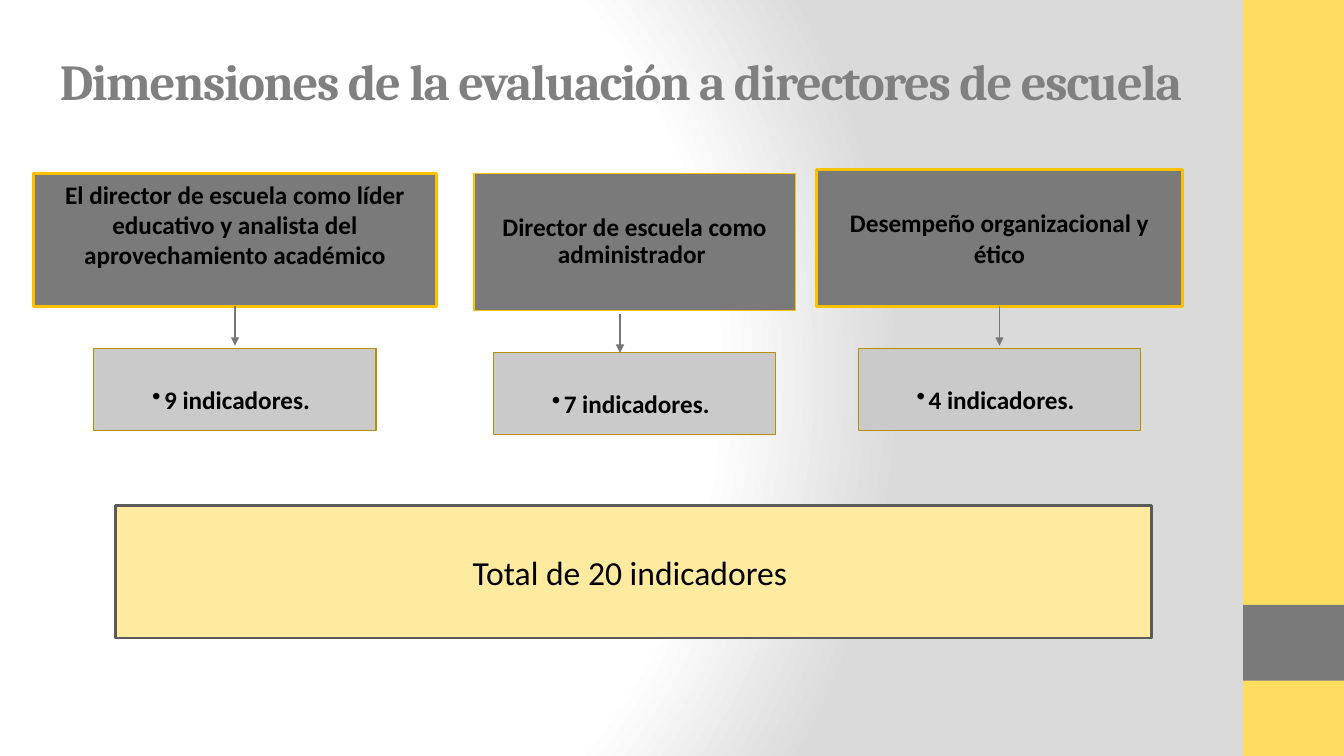
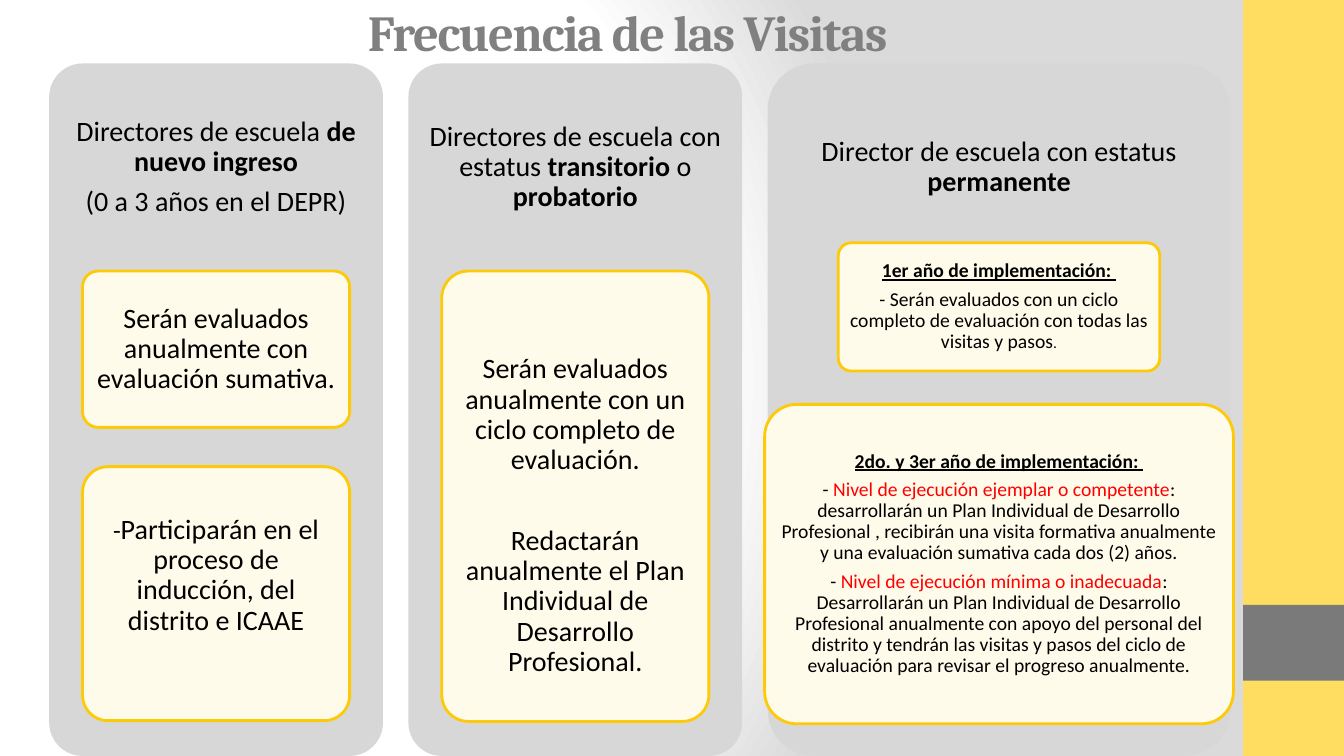
from dataclasses import dataclass

from pptx import Presentation
from pptx.dml.color import RGBColor as Rgb
from pptx.enum.shapes import MSO_CONNECTOR as Link, MSO_SHAPE as Kind
from pptx.enum.text import MSO_ANCHOR as Anchor, PP_ALIGN as Align
from pptx.oxml import parse_xml
from pptx.oxml.ns import nsdecls, qn
from pptx.util import Cm, Pt


@dataclass(frozen=True)
class Theme:
    white: str = "FFFFFF"
    mist: str = "DADADA"
    gold: str = "FEDD61"
    slate: str = "7A7A7A"
    title: str = "808080"
    ink: str = "000000"
    red: str = "FF0000"
    amber: str = "FFC000"
    arrow: str = "777777"
    count: str = "CACACA"
    ochre: str = "B89101"
    total: str = "FEEBA0"
    edge: str = "5A5A5A"
    panel: str = "D7D7D7"
    card: str = "FFFBEB"
    rim: str = "FDCA0A"
    serif: str = "Cambria"
    sans: str = "Calibri"
    huge: int = 36
    big: int = 24
    body: int = 20
    label: int = 18
    note: int = 14
    tiny: int = 11


T = Theme()
RED = {"color": T.red}
BOLD = {"bold": True}
HEAD = {"bold": True, "line": True}


def style(run, size=T.body, font=T.sans, color=T.ink, bold=False, line=False, track=0):
    face = run.font
    face.name, face.size, face.bold = font, Pt(size), bold
    face.underline = line
    face.color.rgb = Rgb.from_string(color)
    if track:
        run._r.get_or_add_rPr().set("spc", str(track * 100))


def dot(para):
    """Give the paragraph a hanging round bullet."""
    props = para._p.get_or_add_pPr()
    props.set("marL", str(Cm(0.3)))
    props.set("indent", str(-Cm(0.3)))
    props.append(parse_xml(f'<a:buChar {nsdecls("a")} char="•"/>'))


def write(shape, paras, align=Align.CENTER, anchor=Anchor.MIDDLE, pad=(0.25, 0.13, 0.25, 0.13),
          space=None, after=0, bullet=False, **fmt):
    """Fill a shape with paragraphs, each a list of strings or (string, format) pairs."""
    frame = shape.text_frame
    frame.word_wrap = True
    frame.vertical_anchor = anchor
    (frame.margin_left, frame.margin_top,
     frame.margin_right, frame.margin_bottom) = map(Cm, pad)
    for i, parts in enumerate(paras):
        para = frame.add_paragraph() if i else frame.paragraphs[0]
        para.alignment = align
        para.space_after = Pt(after)
        if space:
            para.line_spacing = space
        if bullet:
            dot(para)
        for part in parts:
            text, extra = (part, {}) if isinstance(part, str) else part
            run = para.add_run()
            run.text = text
            style(run, **{**fmt, **extra})


def block(slide, box, fill, line=None, width=1, kind=Kind.RECTANGLE):
    shape = slide.shapes.add_shape(kind, *map(Cm, box))
    shape.shadow.inherit = False
    shape.fill.solid()
    shape.fill.fore_color.rgb = Rgb.from_string(fill)
    if line:
        shape.line.color.rgb = Rgb.from_string(line)
        shape.line.width = Pt(width)
    else:
        shape.line.fill.background()
    return shape


def curve(slide, box, fill, **edge):
    shape = block(slide, box, fill, kind=Kind.ROUNDED_RECTANGLE, **edge)
    shape.adjustments[0] = 0.1
    return shape


def label(slide, box, paras, **fmt):
    write(slide.shapes.add_textbox(*map(Cm, box)), paras, **fmt)


def arrow(slide, x, top, start=None):
    """Draw a short arrow downwards, joined to the bottom of start if given."""
    link = slide.shapes.add_connector(Link.STRAIGHT, Cm(x), Cm(top), Cm(x), Cm(top + 0.99))
    if start is not None:
        link.begin_connect(start, 2)
    link.line.color.rgb = Rgb.from_string(T.arrow)
    link.line.width = Pt(1)
    link.line._get_or_add_ln().append(parse_xml(f'<a:tailEnd {nsdecls("a")} type="triangle"/>'))
    link._element.spPr.append(parse_xml(f'<a:effectLst {nsdecls("a")}/>'))


def glow(master):
    """Give the master a round gradient from white to grey."""
    master.background.fill.gradient()
    old = master.element.find(".//" + qn("a:gradFill"))
    stops = "".join(
        f'<a:gs pos="{pos}000"><a:srgbClr val="{color}"/></a:gs>'
        for pos, color in ((0, T.white), (75, T.white), (100, T.mist)))
    old.getparent().replace(old, parse_xml(
        f'<a:gradFill {nsdecls("a")} rotWithShape="1"><a:gsLst>{stops}</a:gsLst>'
        '<a:path path="circle"><a:fillToRect l="20000" t="50000" r="100000" b="50000"/>'
        '</a:path></a:gradFill>'))


def page(prs, title, box, align):
    """Add a slide with the side bands and a title."""
    slide = prs.slides.add_slide(prs.slide_layouts[6])
    block(slide, (31.32, 0, 2.54, 19.05), T.gold)
    block(slide, (31.32, 15.24, 2.54, 1.91), T.slate)
    label(slide, box, [[title]], align=align, size=T.huge, font=T.serif,
          color=T.title, bold=True, track=-1)
    return slide


def areas(prs):
    slide = page(prs, "Dimensiones de la evaluación a directores de escuela ",
                 (0.25, 0.56, 31.04, 2.92), Align.CENTER)
    wide, high = 7.11, 2.06
    rows = (
        ("El director de escuela como líder educativo y analista del aprovechamiento académico",
         (0.84, 4.37, 10.16, 3.35), 2, None, 0.9, 9),
        ("Director de escuela como administrador ", (11.94, 4.37, 8.1, 3.45), 1, 0.9, 0.13, 7),
        ("Desempeño organizacional y ético", (20.57, 4.27, 9.22, 3.45), 2, None, 0.13, 4),
    )
    for text, box, width, space, foot, count in rows:
        left, top, span, tall = box
        mid, base = left + span / 2, top + tall
        head = block(slide, box, T.slate, T.amber, width)
        write(head, [[text]], pad=(0.25, 0.13, 0.25, foot), space=space,
              after=6 if space else 0, size=T.label, bold=True)
        cell = block(slide, (mid - wide / 2, base + 1.07, wide, high), T.count, T.ochre, 0.75)
        write(cell, [[f"{count} indicadores. "]], anchor=Anchor.TOP, pad=(0.18, 0.97, 0.23, 0.25),
              space=0.9, bullet=True, size=T.label, bold=True)
        if width == 2:
            arrow(slide, mid, base, head)
        else:
            arrow(slide, mid - 0.37, base + 0.08)
    total = block(slide, (2.92, 12.73, 26.09, 3.35), T.total, T.edge, 2)
    write(total, [["Total de 20 indicadores "]], size=T.big)


def visits(prs):
    slide = page(prs, "Frecuencia de las Visitas", (9.02, 0, 23.88, 1.6), Align.LEFT)
    wide, gap, top = 6.73, 0.64, 1.6
    small = {"size": T.note, "after": 5, "pad": (0.1, 0.08, 0.1, 0.08)}
    # Each column: panel width, caption, cards as (top, width, height, paragraphs, format).
    cols = (
        (8.41,
         [["Directores de escuela ", ("de nuevo ingreso", BOLD)], ["(0 a 3 años en el DEPR)"]],
         ((6.83, wide, 3.94, [["Serán evaluados anualmente con evaluación sumativa."]], {}),
          (11.76, wide, 6.4,
           [[("-", {"size": T.label}),
             "Participarán en el proceso de inducción, del distrito e ICAAE"]],
           {"pad": (0.13, 0.1, 0.13, 1)}))),
        (8.41,
         [["Directores de escuela con estatus ", ("transitorio ", BOLD), "o",
           (" probatorio", BOLD)]],
         ((6.83, wide, 11.35,
           [["Serán evaluados anualmente con un ciclo completo de evaluación."],
            ["Redactarán anualmente el Plan Individual de Desarrollo Profesional."]],
           {"after": 36, "pad": (0.15, 1.1, 0.15, 0.1)}),)),
        (11.66,
         [["Director de escuela con estatus ", ("permanente", BOLD)]],
         ((6.12, 8.1, 3.23,
           [[("1er año de implementación: ", HEAD)],
            ["- Serán evaluados con un ciclo completo de evaluación con todas las visitas y pasos",
             (".", {"size": T.tiny})]], small),
          (10.19, 11.81, 8.05,
           [[("2do. y 3er año de implementación: ", HEAD)],
            ["- ", ("Nivel de ejecución ejemplar o competente", RED),
             ": desarrollarán un Plan Individual de Desarrollo Profesional , recibirán una visita "
             "formativa anualmente y una evaluación sumativa cada dos (2) años."],
            ["- ", ("Nivel de ejecución mínima o inadecuada", RED),
             ": Desarrollarán un Plan Individual de Desarrollo Profesional anualmente con apoyo "
             "del personal del distrito y tendrán las visitas y pasos del ciclo de evaluación "
             "para revisar el progreso anualmente."]], small))),
    )
    left = 1.24
    for span, head, cards in cols:
        curve(slide, (left, top, span, 17.45), T.panel)
        label(slide, (left, top, span, 5.24), head, pad=(0.2,) * 4, space=0.9, after=7)
        for y, width, high, paras, fmt in cards:
            card = curve(slide, (left + (span - width) / 2, y, width, high), T.card,
                         line=T.rim, width=2)
            write(card, paras, **{"pad": (0.15, 0.1, 0.15, 0.1), "space": 0.9, "after": 7, **fmt})
        left += span + gap


def main():
    prs = Presentation()
    prs.slide_width, prs.slide_height = Cm(33.86), Cm(19.05)
    glow(prs.slide_master)
    areas(prs)
    visits(prs)
    prs.save("out.pptx")


if __name__ == "__main__":
    main()
